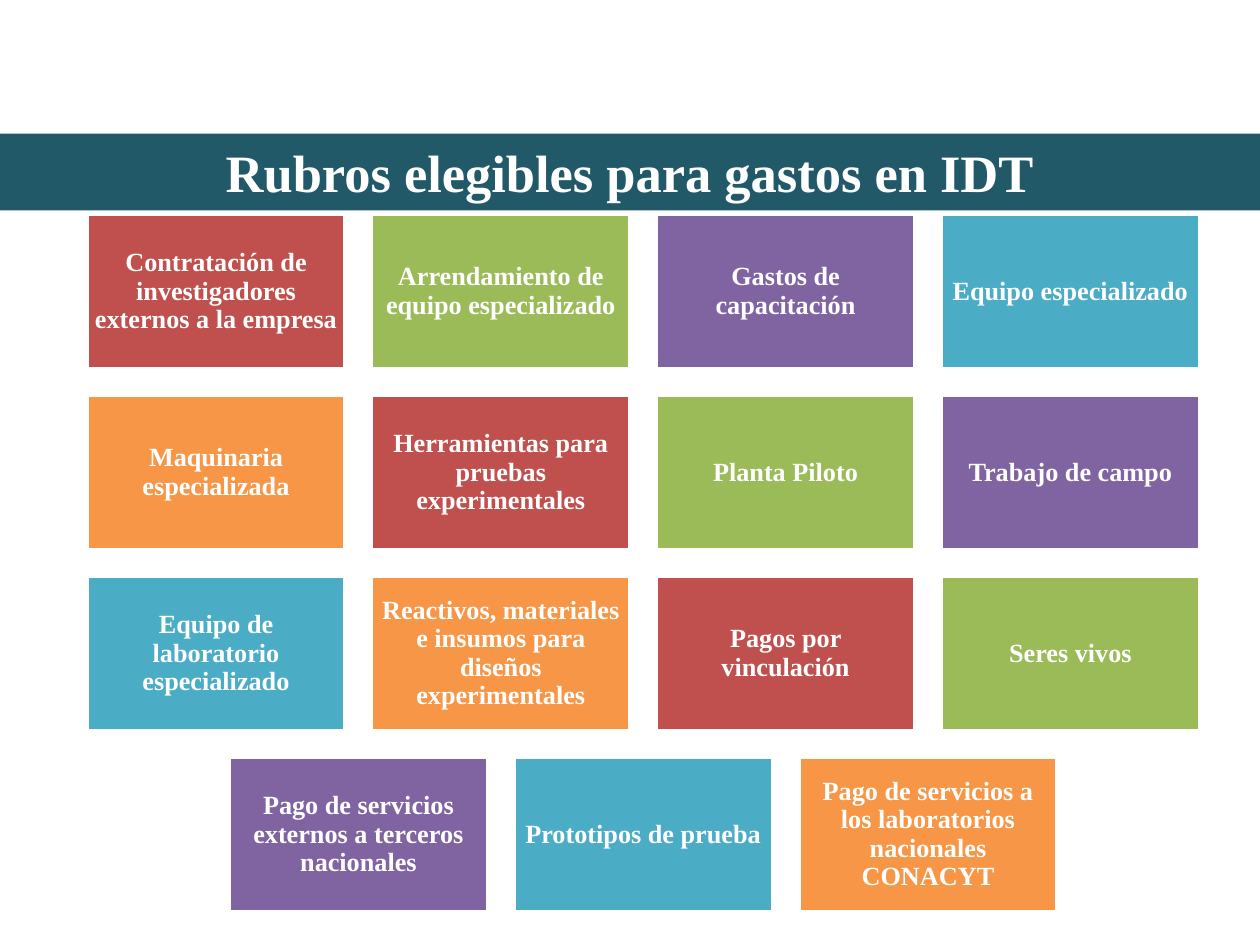
import pptx
import pptx.dml.color
import pptx.enum.shapes
import pptx.enum.text
import pptx.util
from pptx.util import Inches

WHITE = "FFFFFF"
TEAL = "215968"
PALETTE = ["C0504D", "9BBB59", "8064A2", "4BACC6", "F79646"]

TITLE = "Rubros elegibles para gastos en IDT"
ROWS = [
    ["Contratación de investigadores externos a la empresa",
     "Arrendamiento de equipo especializado",
     "Gastos de capacitación",
     "Equipo especializado"],
    ["Maquinaria especializada",
     "Herramientas para pruebas experimentales",
     "Planta Piloto",
     "Trabajo de campo"],
    ["Equipo de laboratorio especializado",
     "Reactivos, materiales e insumos para diseños experimentales",
     "Pagos por vinculación",
     "Seres vivos"],
    ["Pago de servicios externos a terceros nacionales",
     "Prototipos de prueba",
     "Pago de servicios a los laboratorios nacionales CONACYT"],
]

COLUMNS = 4
GRID_LEFT, GRID_TOP = 0.69, 1.7
TILE_WIDTH, TILE_HEIGHT = 2.05, 1.23
COLUMN_STEP = 2.26
ROW_STEP = (6.01 - GRID_TOP) / (len(ROWS) - 1)


def rgb(hex_color):
    return pptx.dml.color.RGBColor.from_string(hex_color)


class SlideBuilder:
    """Holds the text style and the slide being filled."""

    font_name = "Times New Roman"

    def __init__(self, page):
        self.page = page

    def block(self, text, left, top, width, height, fill, size):
        """Add a filled rectangle with centred bold white text."""
        box = self.page.shapes.add_shape(
            pptx.enum.shapes.MSO_SHAPE.RECTANGLE,
            Inches(left), Inches(top), Inches(width), Inches(height))
        box.shadow.inherit = False
        box.fill.solid()
        box.fill.fore_color.rgb = rgb(fill)
        box.line.fill.background()

        frame = box.text_frame
        frame.word_wrap = True
        frame.vertical_anchor = pptx.enum.text.MSO_ANCHOR.MIDDLE
        para = frame.paragraphs[0]
        para.text = text
        para.alignment = pptx.enum.text.PP_ALIGN.CENTER
        para.font.name = self.font_name
        para.font.size = pptx.util.Pt(size)
        para.font.bold = True
        para.font.color.rgb = rgb(WHITE)
        return box

    def tile(self, text, left, top, fill):
        """Add one white-edged tile of the grid."""
        box = self.block(text, left, top, TILE_WIDTH, TILE_HEIGHT, fill, 15)
        box.line.color.rgb = rgb(WHITE)
        box.line.width = pptx.util.Pt(2)
        frame = box.text_frame
        frame.margin_left = frame.margin_right = Inches(0.06)
        frame.margin_top = frame.margin_bottom = Inches(0.06)
        frame.paragraphs[0].line_spacing = 0.9

    def grid(self, rows):
        """Lay out rows of tiles, centring short rows and cycling the colours."""
        for row, labels in enumerate(rows):
            left = GRID_LEFT + (COLUMNS - len(labels)) * COLUMN_STEP / 2
            for column, label in enumerate(labels):
                fill = PALETTE[(row * COLUMNS + column) % len(PALETTE)]
                self.tile(label, left + column * COLUMN_STEP,
                          GRID_TOP + row * ROW_STEP, fill)


def main():
    deck = pptx.Presentation()
    deck.slide_width = Inches(10)
    deck.slide_height = Inches(7.5)
    builder = SlideBuilder(deck.slides.add_slide(deck.slide_layouts[6]))
    builder.grid(ROWS)
    builder.block(TITLE, 0, 1.06, 10, 0.61, TEAL, 30)
    deck.save("out.pptx")


if __name__ == "__main__":
    main()
